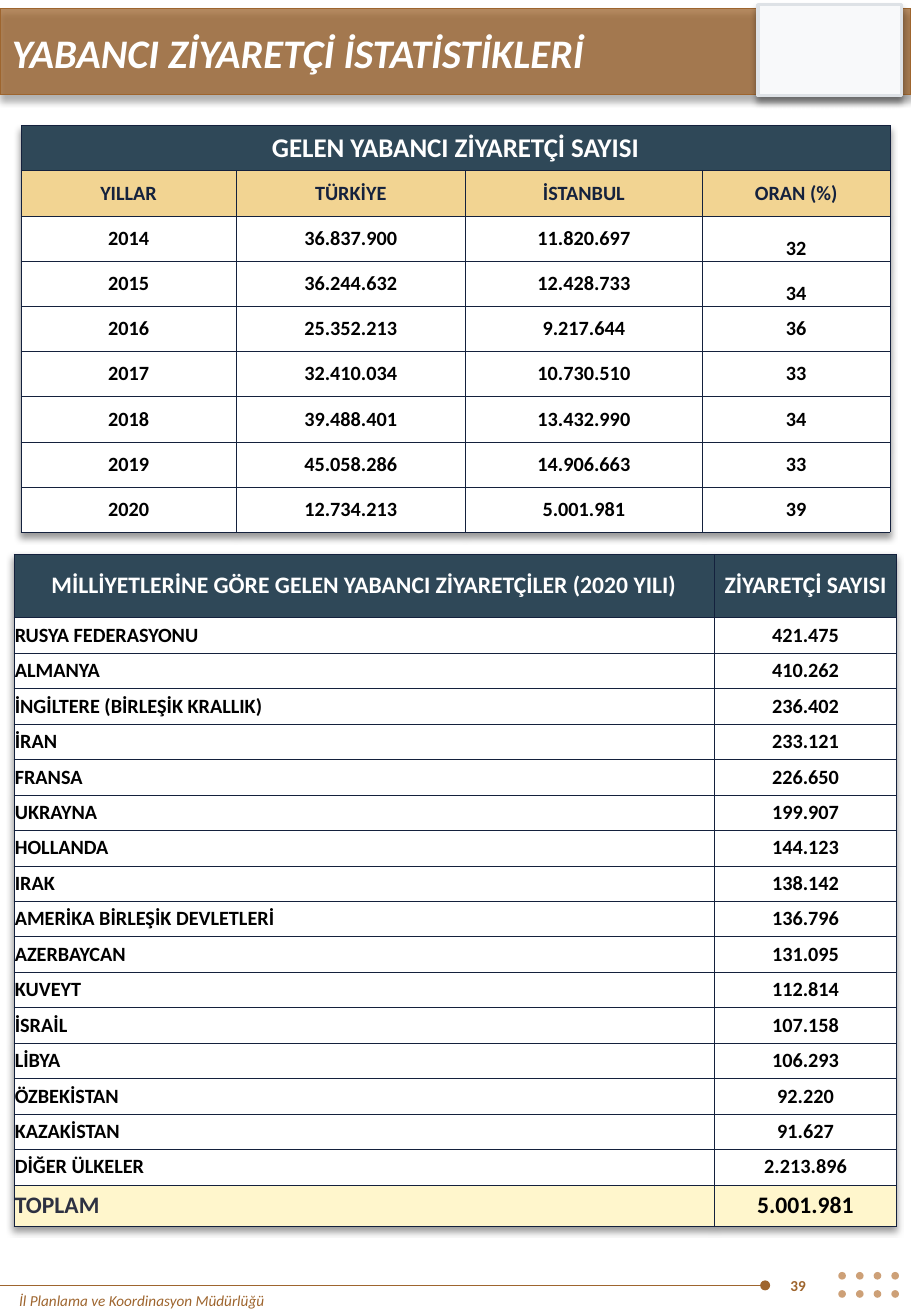
"""Build the foreign visitor statistics slide with its two tables."""
import pptx
import pptx.dml.color
import pptx.enum.shapes
import pptx.enum.text
import pptx.oxml
import pptx.oxml.ns
import pptx.util

Cm = pptx.util.Cm
Pt = pptx.util.Pt
RGB = pptx.dml.color.RGBColor
ALIGN = pptx.enum.text.PP_ALIGN
ANCHOR = pptx.enum.text.MSO_ANCHOR
SHAPE = pptx.enum.shapes.MSO_SHAPE

BROWN = RGB(0x9E, 0x65, 0x2E)
TAN = RGB(0xCD, 0xA0, 0x77)
PANEL = RGB(0xF8, 0xF9, 0xFA)
PANEL_EDGE = RGB(0xDE, 0xE2, 0xE6)
SLATE = RGB(0x2F, 0x48, 0x58)
SAND = RGB(0xF2, 0xD4, 0x92)
CREAM = RGB(0xFF, 0xF6, 0xCC)
NAVY = RGB(0x14, 0x21, 0x3D)
CHARCOAL = RGB(0x2D, 0x31, 0x42)
WHITE = RGB(0xFF, 0xFF, 0xFF)
BLACK = RGB(0x00, 0x00, 0x00)

NS = pptx.oxml.ns.nsdecls("a")
SHADOW = (f'<a:outerShdw {NS} blurRad="50800" dist="38100" dir="5400000" algn="t" rotWithShape="0">'
          '<a:srgbClr val="000000"><a:alpha val="40000"/></a:srgbClr></a:outerShdw>')
BORDER = ('<a:{side} {ns} w="3175"><a:solidFill><a:srgbClr val="{color}"/></a:solidFill></a:{side}>')


def write(tf, text, size=12, color=BLACK, bold=True, italic=False, align=ALIGN.LEFT):
    p = tf.paragraphs[0]
    p.alignment = align
    r = p.add_run()
    r.text = text
    r.font.name = "Calibri"
    r.font.size = Pt(size)
    r.font.color.rgb = color
    r.font.bold = bold
    r.font.italic = italic


def add_effects(parent, index, shadow=""):
    effects = pptx.oxml.parse_xml(f"<a:effectLst {NS}>{shadow}</a:effectLst>")
    parent.insert(len(parent) if index is None else index, effects)


prs = pptx.Presentation()
prs.slide_width = Cm(19.05)
prs.slide_height = Cm(27.51)
s = prs.slides.add_slide(prs.slide_layouts[6])

for x, y, w, h, fill, edge, width in [
    (0, 0.18, 19.05, 1.8, BROWN, BROWN, 1),
    (15.85, 0.1, 3, 1.9, PANEL, PANEL_EDGE, 2),
]:
    sp = s.shapes.add_shape(SHAPE.RECTANGLE, Cm(x), Cm(y), Cm(w), Cm(h))
    sp.fill.solid()
    sp.fill.fore_color.rgb = fill
    sp.line.color.rgb = edge
    sp.line.width = Pt(width)
    add_effects(sp._element.spPr, None, SHADOW)
    if fill == BROWN:
        color = sp._element.spPr.find(pptx.oxml.ns.qn("a:solidFill"))[0]
        color.append(pptx.oxml.parse_xml(f'<a:alpha {NS} val="75000"/>'))

rule = s.shapes.add_connector(pptx.enum.shapes.MSO_CONNECTOR.STRAIGHT,
                              Cm(16), Cm(26.87), Cm(0), Cm(26.87))
rule.line.color.rgb = BROWN
rule.line.width = Pt(0.5)
rule.line._get_or_add_ln().append(pptx.oxml.parse_xml(f'<a:headEnd {NS} type="oval"/>'))
add_effects(rule._element.spPr, None)

for row in range(2):
    for col in range(4):
        dot = s.shapes.add_shape(SHAPE.OVAL, Cm(17.53 + 0.37 * col), Cm(26.59 + 0.38 * row),
                                 Cm(0.16), Cm(0.16))
        dot.shadow.inherit = False
        dot.fill.solid()
        dot.fill.fore_color.rgb = TAN
        dot.line.fill.background()

for text, x, y, w, h, anchor, fmt in [
    ("İl Planlama ve Koordinasyon Müdürlüğü", 0.15, 26.87, 11.9, 0.64, ANCHOR.TOP,
     dict(size=9, color=BROWN, bold=False, italic=True)),
    ("YABANCI ZİYARETÇİ İSTATİSTİKLERİ", 0, 0.46, 19.05, 1.28, ANCHOR.TOP,
     dict(size=24, color=WHITE, italic=True)),
    ("39", 16.28, 26.34, 1.27, 1.07, ANCHOR.MIDDLE, dict(size=9, color=BROWN)),
]:
    tf = s.shapes.add_textbox(Cm(x), Cm(y), Cm(w), Cm(h)).text_frame
    tf.word_wrap = True
    tf.vertical_anchor = anchor
    write(tf, text, **fmt)

years = [
    ("GELEN YABANCI ZİYARETÇİ SAYISI", "", "", ""),
    ("YILLAR", "TÜRKİYE", "İSTANBUL", "ORAN (%)"),
    ("2014", "36.837.900", "11.820.697", "32"),
    ("2015", "36.244.632", "12.428.733", "34"),
    ("2016", "25.352.213", "9.217.644", "36"),
    ("2017", "32.410.034", "10.730.510", "33"),
    ("2018", "39.488.401", "13.432.990", "34"),
    ("2019", "45.058.286", "14.906.663", "33"),
    ("2020", "12.734.213", "5.001.981", "39"),
]
countries = [
    ("MİLLİYETLERİNE GÖRE GELEN YABANCI ZİYARETÇİLER (2020 YILI)", "ZİYARETÇİ SAYISI"),
    ("RUSYA FEDERASYONU", "421.475"),
    ("ALMANYA", "410.262"),
    ("İNGİLTERE (BİRLEŞİK KRALLIK)", "236.402"),
    ("İRAN", "233.121"),
    ("FRANSA", "226.650"),
    ("UKRAYNA", "199.907"),
    ("HOLLANDA", "144.123"),
    ("IRAK", "138.142"),
    ("AMERİKA BİRLEŞİK DEVLETLERİ", "136.796"),
    ("AZERBAYCAN", "131.095"),
    ("KUVEYT", "112.814"),
    ("İSRAİL", "107.158"),
    ("LİBYA", "106.293"),
    ("ÖZBEKİSTAN", "92.220"),
    ("KAZAKİSTAN", "91.627"),
    ("DİĞER ÜLKELER", "2.213.896"),
    ("TOPLAM", "5.001.981"),
]

for rows, x, y, widths, heights, head_size in [
    (years, 0.44, 2.62, [4.5, 4.79, 4.96, 3.92], [8.51 / 9] * 9, 16),
    (countries, 0.29, 11.58, [14.65, 3.81], [1.33] + [11.87 / 16] * 16 + [0.86], 14),
]:
    frame = s.shapes.add_table(len(rows), len(widths), Cm(x), Cm(y),
                               Cm(sum(widths)), Cm(sum(heights)))
    table = frame.table
    table.first_row = False
    table.horz_banding = False
    add_effects(table._tbl.tblPr, 0, SHADOW)
    for column, width in zip(table.columns, widths):
        column.width = Cm(width)
    for row, height in zip(table.rows, heights):
        row.height = Cm(height)
    if rows is years:
        table.cell(0, 0).merge(table.cell(0, 3))
    for i, values in enumerate(rows):
        for j, text in enumerate(values):
            cell = table.cell(i, j)
            fill, color, size = WHITE, BLACK, 12
            if i == 0:
                fill, color, size = SLATE, WHITE, head_size
            elif values[0] == "YILLAR":
                fill, color = SAND, NAVY
            elif values[0] == "TOPLAM":
                fill, color, size = CREAM, CHARCOAL if j == 0 else BLACK, 14
            cell.fill.solid()
            cell.fill.fore_color.rgb = fill
            cell.margin_left = cell.margin_right = Cm(0.02)
            cell.margin_top = cell.margin_bottom = Cm(0)
            low = rows is years and j == 3 and values[0] in ("2014", "2015")
            cell.vertical_anchor = ANCHOR.BOTTOM if low else ANCHOR.MIDDLE
            for k, side in enumerate(["lnL", "lnR", "lnT", "lnB"]):
                line = pptx.oxml.parse_xml(BORDER.format(side=side, ns=NS, color=NAVY))
                cell._tc.tcPr.insert(k, line)
            if text:
                left = rows is countries and i > 0 and j == 0
                write(cell.text_frame, text, size=size, color=color,
                      align=ALIGN.LEFT if left else ALIGN.CENTER)

prs.save("out.pptx")
